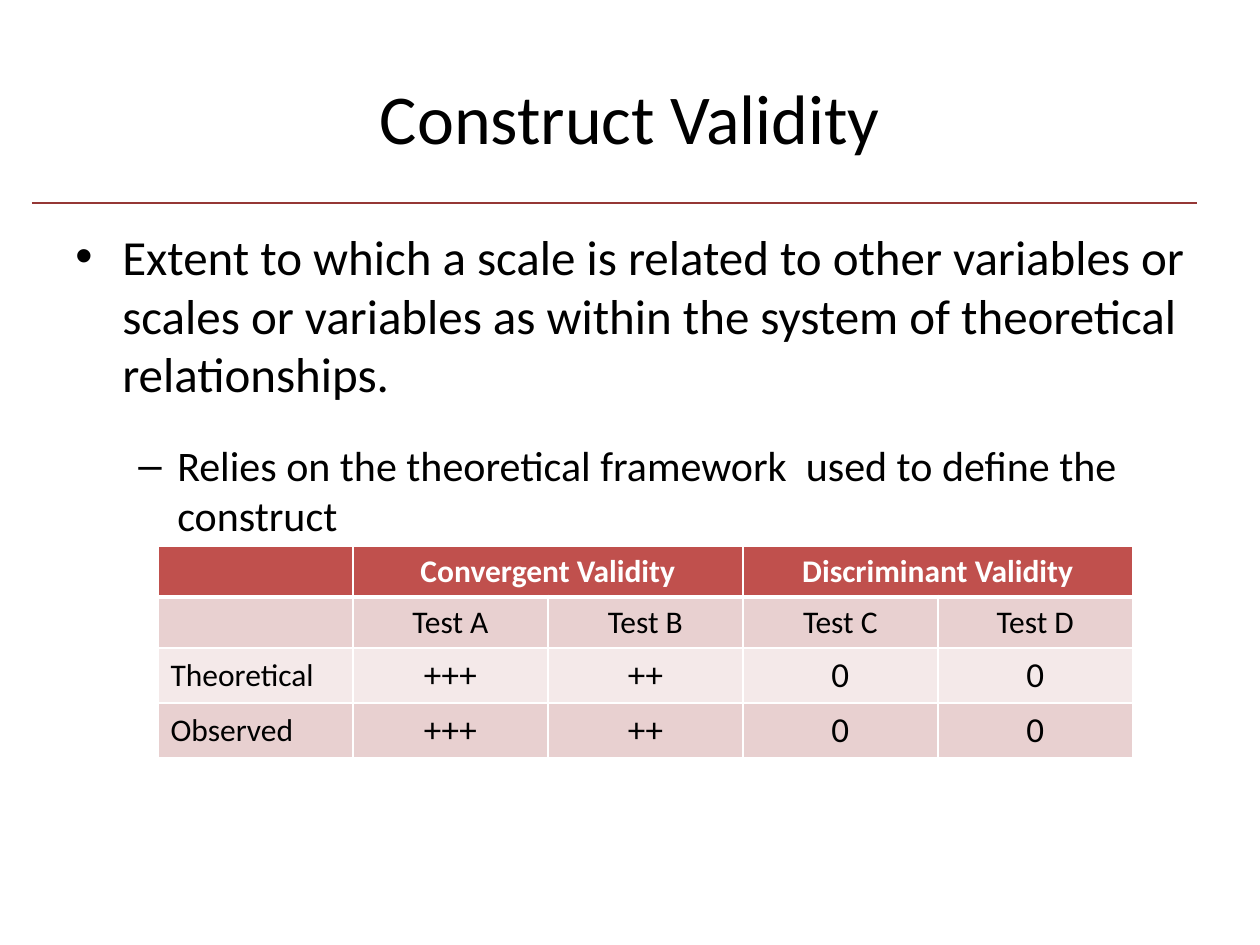
from dataclasses import dataclass

from lxml.etree import SubElement
from pptx import Presentation
from pptx.dml.color import RGBColor as RGB
from pptx.enum.shapes import MSO_CONNECTOR as CONNECTOR
from pptx.enum.text import MSO_ANCHOR as ANCHOR, PP_ALIGN as ALIGN
from pptx.oxml import parse_xml
from pptx.oxml.ns import nsdecls, qn
from pptx.util import Pt

EMU_PER_PX = 914400 / 126


@dataclass(frozen=True)
class Theme:
    font: str = "Calibri"
    text: str = "000000"
    white: str = "FFFFFF"
    rule: str = "953735"
    header: str = "C0504D"
    band_dark: str = "E8D0D0"
    band_light: str = "F4E9E9"
    title_size: int = 40
    body_size: int = 28
    sub_size: int = 24
    label_size: int = 18
    value_size: int = 20


THEME = Theme()

# Text, bullet, left margin px, hanging px, size, space before pt
BULLETS = [
    ("Extent to which a scale is related to other variables or scales or "
     "variables as within the system of theoretical relationships.",
     "•", 47, 47, THEME.body_size, 0),
    ("Relies on the theoretical framework  used to define the construct",
     "–", 102, 39, THEME.sub_size, 21),
]

# Cell texts, fill, row height px
ROWS = [
    (["", "Convergent Validity", "", "Discriminant Validity", ""], THEME.header, 51),
    (["", "Test A", "Test B", "Test C", "Test D"], THEME.band_dark, 51),
    (["Theoretical", "+++", "++", "0", "0"], THEME.band_light, 55),
    (["Observed", "+++", "++", "0", "0"], THEME.band_dark, 55),
]
COL_WIDTH = 195


def px(n):
    return round(n * EMU_PER_PX)


def add_run(p, text, size, color=THEME.text, bold=False):
    r = p.add_run()
    r.text = text
    r.font.name = THEME.font
    r.font.size = Pt(size)
    r.font.bold = bold
    r.font.color.rgb = RGB.from_string(color)


def add_text_box(slide, x, y, w, h, anchor=ANCHOR.TOP):
    tf = slide.shapes.add_textbox(px(x), px(y), px(w), px(h)).text_frame
    tf.word_wrap = True
    tf.vertical_anchor = anchor
    return tf


def add_title(slide, text):
    p = add_text_box(slide, 63, 38, 1134, 158, ANCHOR.MIDDLE).paragraphs[0]
    p.alignment = ALIGN.CENTER
    add_run(p, text, THEME.title_size)


def add_rule(slide, x1, x2, y):
    line = slide.shapes.add_connector(CONNECTOR.STRAIGHT, px(x1), px(y), px(x2), px(y))
    line.line.color.rgb = RGB.from_string(THEME.rule)
    line.line.width = Pt(1.5)
    SubElement(line._element.spPr, qn("a:effectLst"))


def add_bullets(slide, items):
    tf = add_text_box(slide, 63, 220, 1134, 624)
    for i, (text, mark, margin, hang, size, before) in enumerate(items):
        p = tf.add_paragraph() if i else tf.paragraphs[0]
        pPr = p._p.get_or_add_pPr()
        pPr.set("marL", str(px(margin)))
        pPr.set("indent", str(-px(hang)))
        SubElement(pPr, qn("a:buFont"), typeface="Arial")
        SubElement(pPr, qn("a:buChar"), char=mark)
        p.space_before = Pt(before)
        add_run(p, text, size)


def set_borders(cell, top, bottom):
    """Put white borders ahead of the fill, as the schema orders them."""
    tcPr = cell._tc.get_or_add_tcPr()
    for i, (side, width) in enumerate((("L", 1), ("R", 1), ("T", top), ("B", bottom))):
        tcPr.insert(i, parse_xml(
            f'<a:ln{side} {nsdecls("a")} w="{Pt(width)}"><a:solidFill>'
            f'<a:srgbClr val="{THEME.white}"/></a:solidFill></a:ln{side}>'))


def add_validity_table(slide, x, y):
    columns = len(ROWS[0][0])
    height = sum(row[2] for row in ROWS)
    table = slide.shapes.add_table(len(ROWS), columns, px(x), px(y),
                                   px(columns * COL_WIDTH), px(height)).table
    for column in table.columns:
        column.width = px(COL_WIDTH)
    for i, (texts, fill, row_height) in enumerate(ROWS):
        table.rows[i].height = px(row_height)
        is_header = i == 0
        for j, text in enumerate(texts):
            cell = table.cell(i, j)
            cell.fill.solid()
            cell.fill.fore_color.rgb = RGB.from_string(fill)
            set_borders(cell, 3 if i == 1 else 1, 3 if is_header else 1)
            cell.vertical_anchor = ANCHOR.MIDDLE
            if text:
                p = cell.text_frame.paragraphs[0]
                p.alignment = ALIGN.CENTER if j else ALIGN.LEFT
                size = THEME.value_size if i > 1 and j else THEME.label_size
                add_run(p, text, size, THEME.white if is_header else THEME.text, is_header)
    # Each heading spans a pair of tests
    for j in (1, 3):
        table.cell(0, j).merge(table.cell(0, j + 1))


def main():
    prs = Presentation()
    prs.slide_width, prs.slide_height = px(1260), px(945)
    slide = prs.slides.add_slide(prs.slide_layouts[6])
    add_rule(slide, 32, 1197, 203)
    add_title(slide, "Construct Validity")
    add_bullets(slide, BULLETS)
    add_validity_table(slide, 158, 546)
    prs.save("out.pptx")


if __name__ == "__main__":
    main()
